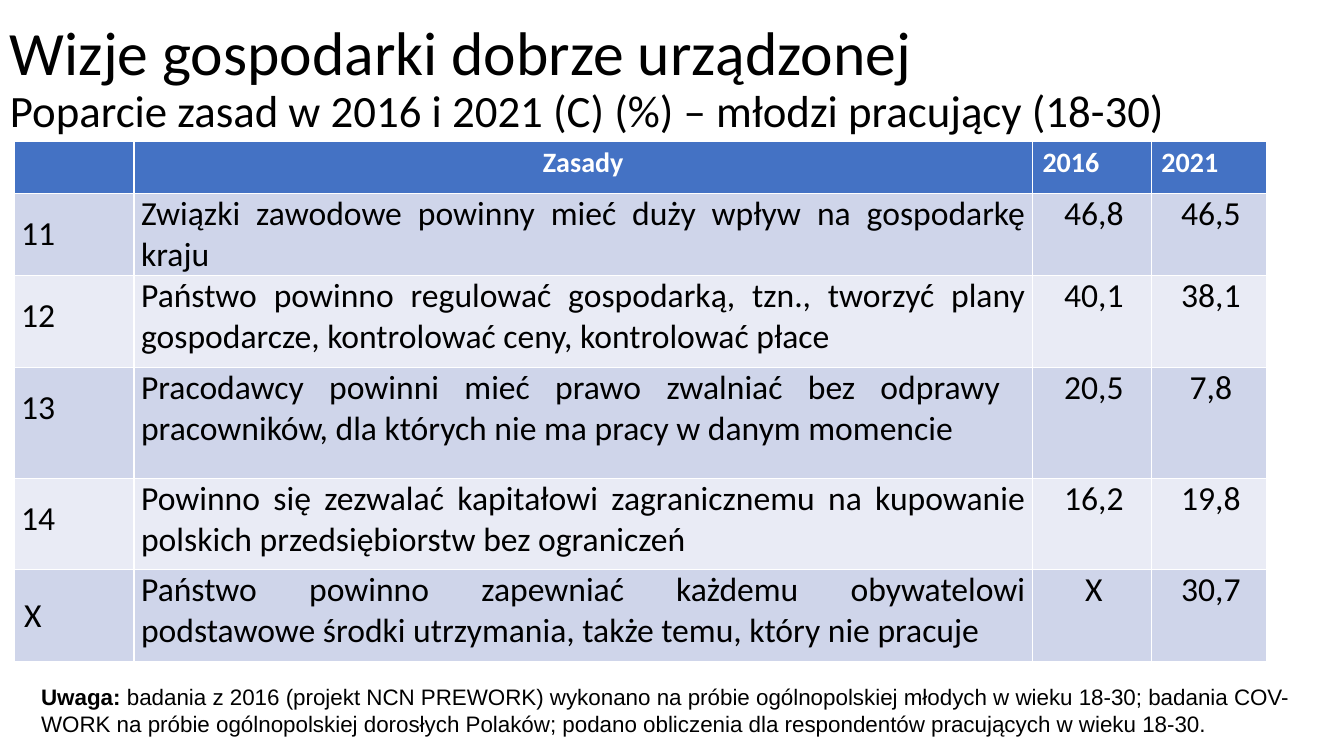
from pptx import Presentation
from pptx.dml.color import RGBColor
from pptx.enum.text import MSO_ANCHOR, MSO_AUTO_SIZE, PP_ALIGN
from pptx.util import Inches, Pt

BLACK = RGBColor(0x00, 0x00, 0x00)
WHITE = RGBColor(0xFF, 0xFF, 0xFF)
HEADER_BLUE = RGBColor(0x44, 0x72, 0xC4)
BAND_DARK = RGBColor(0xCF, 0xD5, 0xEA)
BAND_LIGHT = RGBColor(0xE9, 0xEB, 0xF5)

HEADINGS = ["", "Zasady", "2016", "2021"]
PRINCIPLES = [
    ("11", "Związki zawodowe powinny mieć duży wpływ na gospodarkę kraju", "46,8", "46,5"),
    ("12", "Państwo powinno regulować gospodarką, tzn., tworzyć plany gospodarcze, "
           "kontrolować ceny, kontrolować płace", "40,1", "38,1"),
    ("13", "Pracodawcy powinni mieć prawo zwalniać bez odprawy  pracowników, "
           "dla których nie ma pracy w danym momencie", "20,5", "7,8"),
    ("14", "Powinno się zezwalać kapitałowi zagranicznemu na kupowanie polskich "
           "przedsiębiorstw bez ograniczeń", "16,2", "19,8"),
    ("X", "Państwo powinno zapewniać każdemu obywatelowi podstawowe środki utrzymania, "
          "także temu, który nie pracuje", "X", "30,7"),
]
COLUMN_WIDTHS = [1.19, 8.91, 1.18, 1.14]
ROW_HEIGHTS = [0.52, 0.81, 0.91, 1.1, 0.91, 0.91]


def style_font(font, name, size, color=BLACK, bold=False):
    font.name = name
    font.size = Pt(size)
    font.color.rgb = color
    font.bold = bold


deck = Presentation()
deck.slide_width = Inches(13.33)
deck.slide_height = Inches(7.5)
page = deck.slides.add_slide(deck.slide_layouts[6])

# Table of principles
table = page.shapes.add_table(
    len(ROW_HEIGHTS), len(COLUMN_WIDTHS), Inches(0.14), Inches(1.4),
    Inches(sum(COLUMN_WIDTHS)), Inches(sum(ROW_HEIGHTS))).table
for column, width in zip(table.columns, COLUMN_WIDTHS):
    column.width = Inches(width)
for row, height in zip(table.rows, ROW_HEIGHTS):
    row.height = Inches(height)

# Header row
for column_index, heading in enumerate(HEADINGS):
    cell = table.cell(0, column_index)
    cell.fill.solid()
    cell.fill.fore_color.rgb = HEADER_BLUE
    cell.text = heading
    para = cell.text_frame.paragraphs[0]
    style_font(para.font, "Calibri", 20, WHITE, True)
    if heading == "Zasady":
        para.alignment = PP_ALIGN.CENTER

# Body rows
for row_index, principle in enumerate(PRINCIPLES, start=1):
    for column_index, entry in enumerate(principle):
        cell = table.cell(row_index, column_index)
        cell.fill.solid()
        cell.fill.fore_color.rgb = BAND_DARK if row_index % 2 else BAND_LIGHT
        cell.text = entry
        para = cell.text_frame.paragraphs[0]
        style_font(para.font, "Calibri", 24)
        if column_index == 0:
            para.line_spacing = 1.5
        if column_index == 0 and entry == "X":
            continue  # keeps the default margins and left alignment
        cell.margin_left = cell.margin_right = Inches(0.07)
        cell.margin_top = cell.margin_bottom = 0
        if column_index < 2:
            para.alignment = PP_ALIGN.JUSTIFY
        else:
            para.alignment = PP_ALIGN.CENTER
            para._p.get_or_add_pPr().set("marL", str(Inches(0.04)))

# Title and subtitle
box = page.shapes.add_textbox(0, 0, Inches(12.95), Inches(1.59))
box.text_frame.word_wrap = True
box.text_frame.vertical_anchor = MSO_ANCHOR.MIDDLE
para = box.text_frame.paragraphs[0]
para.line_spacing = 0.9
span = para.add_run()
span.text = "Wizje gospodarki dobrze urządzonej"
style_font(span.font, "Calibri", 44)
para.add_line_break()
span = para.add_run()
span.text = "Poparcie zasad w 2016 i 2021 (C) (%) – młodzi pracujący (18-30)"
style_font(span.font, "Calibri", 32)

# Note on the samples
box = page.shapes.add_textbox(Inches(0.31), Inches(6.73), Inches(12.64), Inches(0.64))
box.text_frame.word_wrap = True
box.text_frame.auto_size = MSO_AUTO_SIZE.SHAPE_TO_FIT_TEXT
para = box.text_frame.paragraphs[0]
for text, bold in [
    ("Uwaga: ", True),
    ("badania z 2016 (projekt NCN PREWORK) wykonano na próbie ogólnopolskiej młodych "
     "w wieku 18-30; badania COV-WORK na próbie ogólnopolskiej dorosłych Polaków; "
     "podano obliczenia dla respondentów pracujących w wieku 18-30.", False),
]:
    span = para.add_run()
    span.text = text
    style_font(span.font, "Arial", 16, bold=bold)

deck.save("out.pptx")
